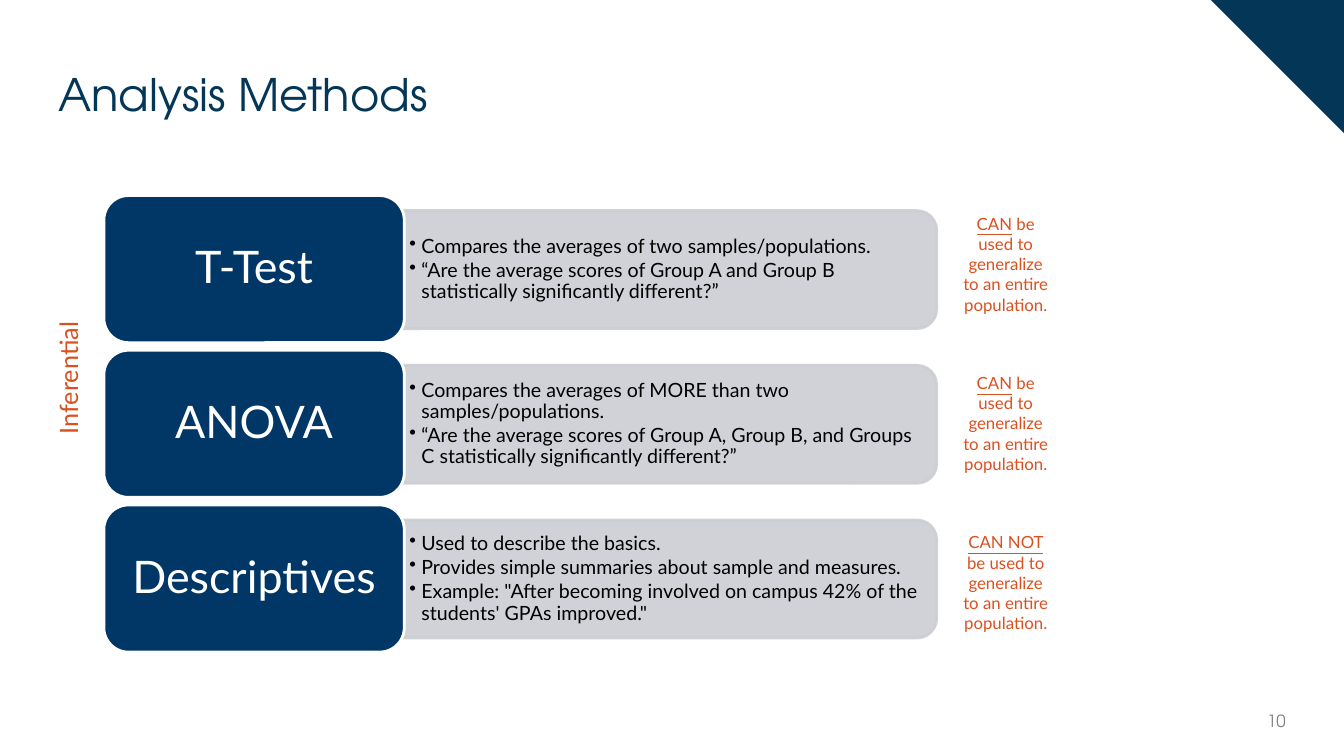
"""Build the Analysis Methods slide with three method rows and their notes."""
from dataclasses import dataclass

from lxml.etree import SubElement
from pptx import Presentation
from pptx.dml.color import RGBColor
from pptx.enum.shapes import MSO_SHAPE
from pptx.enum.text import MSO_ANCHOR, PP_ALIGN
from pptx.oxml.ns import qn
from pptx.util import Inches, Pt


@dataclass(frozen=True)
class Theme:
    navy: RGBColor = RGBColor(0x04, 0x36, 0x57)
    label_blue: RGBColor = RGBColor(0x00, 0x37, 0x67)
    bar_gray: RGBColor = RGBColor(0xCC, 0xCE, 0xD3)
    orange: RGBColor = RGBColor(0xDA, 0x51, 0x20)
    number_gray: RGBColor = RGBColor(0x80, 0x80, 0x80)
    black: RGBColor = RGBColor(0, 0, 0)
    white: RGBColor = RGBColor(0xFF, 0xFF, 0xFF)
    heading_font: str = "TeX Gyre Adventor"
    body_font: str = "Lato"
    heading_size: Pt = Pt(32)
    side_size: Pt = Pt(18)
    bullet_size: Pt = Pt(14)
    small_size: Pt = Pt(12)


theme = Theme()
presentation = Presentation()
presentation.slide_width = Inches(13.33)
presentation.slide_height = Inches(7.5)
slide = presentation.slides.add_slide(presentation.slide_layouts[6])


def add_panel(kind, left, top, width, height, fill, line=None):
    """Add a preset shape with a plain fill and an optional outline."""
    shape = slide.shapes.add_shape(kind, Inches(left), Inches(top), Inches(width), Inches(height))
    shape.shadow.inherit = False
    shape.fill.solid()
    shape.fill.fore_color.rgb = fill
    if line is None:
        shape.line.fill.background()
    else:
        shape.line.color.rgb = line
        shape.line.width = Pt(2)
    return shape


def add_text(left, top, width, height, lines, size, color, font=theme.body_font,
             anchor=MSO_ANCHOR.TOP, align=PP_ALIGN.LEFT, bulleted=False):
    """Add a text box; each line is a list of text runs."""
    shape = slide.shapes.add_textbox(Inches(left), Inches(top), Inches(width), Inches(height))
    frame = shape.text_frame
    frame.word_wrap = True
    frame.vertical_anchor = anchor
    for index, texts in enumerate(lines):
        paragraph = frame.add_paragraph() if index else frame.paragraphs[0]
        paragraph.alignment = align
        for text in texts:
            paragraph.add_run().text = text
        if bulleted:
            paragraph.line_spacing = 0.9
            paragraph.space_after = Pt(2)
            properties = paragraph._p.get_or_add_pPr()
            properties.set("marL", str(Inches(0.12)))
            properties.set("indent", str(-Inches(0.12)))
            SubElement(properties, qn("a:buChar"), char="•")
        paragraph.font.name = font
        paragraph.font.size = size
        paragraph.font.color.rgb = color
    return shape


corner = add_panel(MSO_SHAPE.RIGHT_TRIANGLE, 12, -0.01, 1.35, 1.35, theme.navy)
corner.rotation = 180
add_text(0.48, 0.4, 12.37, 1.06, [["Analysis Methods"]], theme.heading_size, theme.navy,
         theme.heading_font, MSO_ANCHOR.MIDDLE)
add_text(9.85, 6.95, 3, 0.4, [["10"]], theme.small_size, theme.number_gray,
         theme.heading_font, MSO_ANCHOR.MIDDLE, PP_ALIGN.RIGHT)

methods = [
    ("T-Test",
     ["Compares the averages of two samples/populations.",
      "“Are the average scores of Group A and Group B statistically significantly different?”"],
     ["CAN", " be used to generalize to an entire population."]),
    ("ANOVA",
     ["Compares the averages of MORE than two samples/populations.",
      "“Are the average scores of Group A, Group B, and Groups C "
      "statistically significantly different?”"],
     ["CAN", " be used to generalize to an entire population."]),
    ("Descriptives",
     ["Used to describe the basics.",
      "Provides simple summaries about sample and measures.",
      "Example: \"After becoming involved on campus 42% of the students' GPAs improved.\""],
     ["CAN NOT ", "be used to generalize to an entire population."]),
]

for row, (name, bullets, note) in enumerate(methods):
    top = 1.94 + 1.535 * row

    bar = add_panel(MSO_SHAPE.ROUND_2_SAME_RECTANGLE, 6.06, top - 1.91, 1.17, 5.29,
                    theme.bar_gray, theme.bar_gray)
    bar.rotation = 90
    for color in bar._element.spPr.iter(qn("a:srgbClr")):
        SubElement(color, qn("a:alpha"), val="90000")

    details = add_text(4, top + 0.21, 5.23, 1.05, [[bullet] for bullet in bullets],
                       theme.bullet_size, theme.black, anchor=MSO_ANCHOR.MIDDLE, bulleted=True)
    frame = details.text_frame
    frame.margin_left = frame.margin_right = Inches(0.06)
    frame.margin_top = frame.margin_bottom = Inches(0.03)

    label = add_panel(MSO_SHAPE.ROUNDED_RECTANGLE, 1.03, top, 2.98, 1.46,
                      theme.label_blue, theme.white)
    frame = label.text_frame
    frame.word_wrap = True
    frame.vertical_anchor = MSO_ANCHOR.MIDDLE
    paragraph = frame.paragraphs[0]
    paragraph.text = name
    paragraph.alignment = PP_ALIGN.CENTER
    paragraph.line_spacing = 0.9
    paragraph.font.name = theme.body_font
    paragraph.font.size = theme.heading_size
    paragraph.font.color.rgb = theme.white

    remark = add_text(9.43, 2.07 + 1.58 * row, 1.09, 1.11, [note], theme.small_size,
                      theme.orange, align=PP_ALIGN.CENTER)
    remark.text_frame.paragraphs[0].runs[0].font.underline = True

side_label = add_text(-0.08, 3.45, 1.51, 0.4, [["Inferential"]], theme.side_size, theme.orange)
side_label.rotation = 270

presentation.save("out.pptx")
